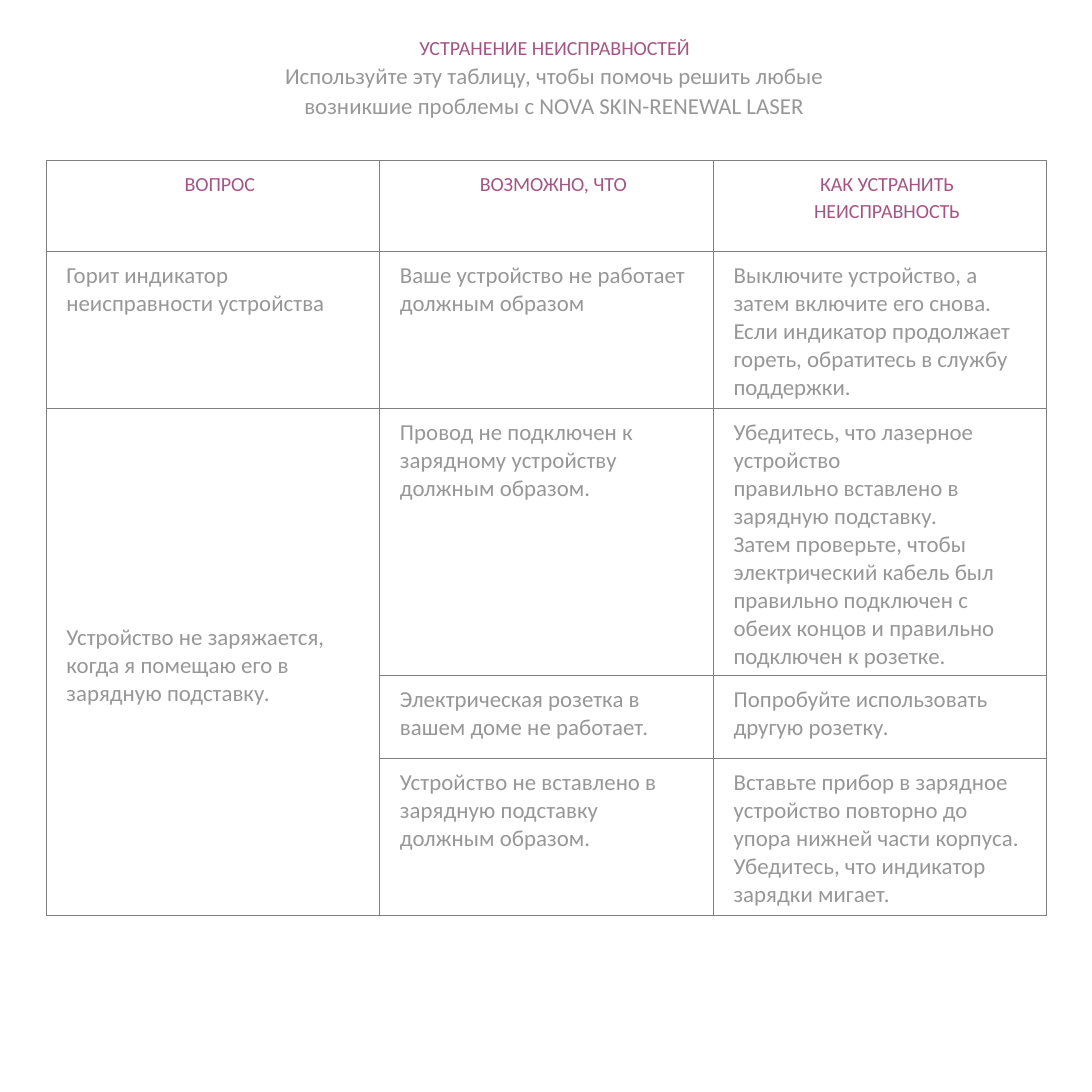
from lxml.etree import SubElement
from pptx import Presentation
from pptx.dml.color import RGBColor
from pptx.enum.text import MSO_ANCHOR, PP_ALIGN
from pptx.oxml.ns import qn
from pptx.util import Inches, Pt

SIDE = Inches(5.31)
HEADING, BODY, RULE = "A35683", "979797", "808080"

INTRO = ("УСТРАНЕНИЕ НЕИСПРАВНОСТЕЙ",
         "Используйте эту таблицу, чтобы помочь решить любые "
         "возникшие проблемы с NOVA SKIN-RENEWAL LASER")
HEADERS = ["ВОПРОС", "ВОЗМОЖНО, ЧТО", "КАК УСТРАНИТЬ НЕИСПРАВНОСТЬ"]
PROBLEMS = [
    ["Горит индикатор неисправности устройства",
     "Ваше устройство не работает должным образом",
     "Выключите устройство, а затем включите его снова. Если индикатор "
     "продолжает гореть, обратитесь в службу поддержки."],
    ["Устройство не заряжается, когда я помещаю его в\nзарядную подставку.",
     "Провод не подключен к зарядному устройству должным образом.",
     "Убедитесь, что лазерное устройство\n"
     "правильно вставлено в зарядную подставку.\n"
     "Затем проверьте, чтобы электрический кабель был правильно подключен "
     "с обеих концов и правильно подключен к розетке."],
    [None,
     "Электрическая розетка в вашем доме не работает.",
     "Попробуйте использовать другую розетку."],
    [None,
     "Устройство не вставлено в зарядную подставку должным образом.",
     "Вставьте прибор в зарядное устройство повторно до упора нижней части "
     "корпуса. Убедитесь, что индикатор зарядки мигает."],
]
ROW_SHARES = [8.33, 14.38, 24.45, 7.6, 14.38]
COLUMN_SHARE = 30.55


def color(code):
    return RGBColor.from_string(code)


def share(percent):
    """Length as a percentage of the square slide's side."""
    return round(SIDE * percent / 100)


class Sheet:
    def __init__(self, presentation):
        self.slide = presentation.slides.add_slide(presentation.slide_layouts[6])
        self.font = "Calibri"

    def style(self, paragraph, size, code, centered=False):
        if centered:
            paragraph.alignment = PP_ALIGN.CENTER
            paragraph.line_spacing = 1.1
        for run in paragraph.runs:
            run.font.name = self.font
            run.font.size = Pt(size)
            run.font.color.rgb = color(code)

    def intro(self, left, top, width, height, title, lead):
        box = self.slide.shapes.add_textbox(*map(share, (left, top, width, height)))
        frame = box.text_frame
        frame.word_wrap = True
        frame.margin_left = Inches(0.17)
        frame.text = f"{title}\n{lead}"
        self.style(frame.paragraphs[0], 7, HEADING, centered=True)
        self.style(frame.paragraphs[1], 8, BODY, centered=True)

    def border(self, cell):
        properties = cell._tc.get_or_add_tcPr()
        for position, side in enumerate(("a:lnL", "a:lnR", "a:lnT", "a:lnB")):
            line = SubElement(properties, qn(side), w=str(Pt(0.25)))
            SubElement(SubElement(line, qn("a:solidFill")), qn("a:srgbClr"), val=RULE)
            properties.insert(position, line)

    def fill_cell(self, cell, text, header):
        cell.fill.background()
        self.border(cell)
        cell.margin_bottom = Inches(0.01)
        if header:
            cell.margin_left = Inches(0.17)
        if text is None:
            return
        cell.text_frame.text = text
        for paragraph in cell.text_frame.paragraphs:
            self.style(paragraph, 7 if header else 8,
                       HEADING if header else BODY, centered=header)

    def guide(self, left, top, rows, row_shares, column_share):
        columns = len(rows[0])
        frame = self.slide.shapes.add_table(
            len(rows), columns, share(left), share(top),
            share(column_share * columns), share(sum(row_shares)))
        table = frame.table
        table.first_row = table.horz_banding = False
        for column in table.columns:
            column.width = share(column_share)
        for index, (texts, height) in enumerate(zip(rows, row_shares)):
            table.rows[index].height = share(height)
            for cell, text in zip(table.rows[index].cells, texts):
                self.fill_cell(cell, text, header=index == 0)
        return table


def main():
    presentation = Presentation()
    presentation.slide_width = presentation.slide_height = SIDE
    sheet = Sheet(presentation)
    sheet.intro(19.6, 2.07, 61, 10, *INTRO)
    guide = sheet.guide(4.2, 14.65, [HEADERS, *PROBLEMS], ROW_SHARES, COLUMN_SHARE)
    charging_issue = guide.cell(2, 0)
    charging_issue.merge(guide.cell(4, 0))
    charging_issue.vertical_anchor = MSO_ANCHOR.MIDDLE
    presentation.save("out.pptx")


if __name__ == "__main__":
    main()
